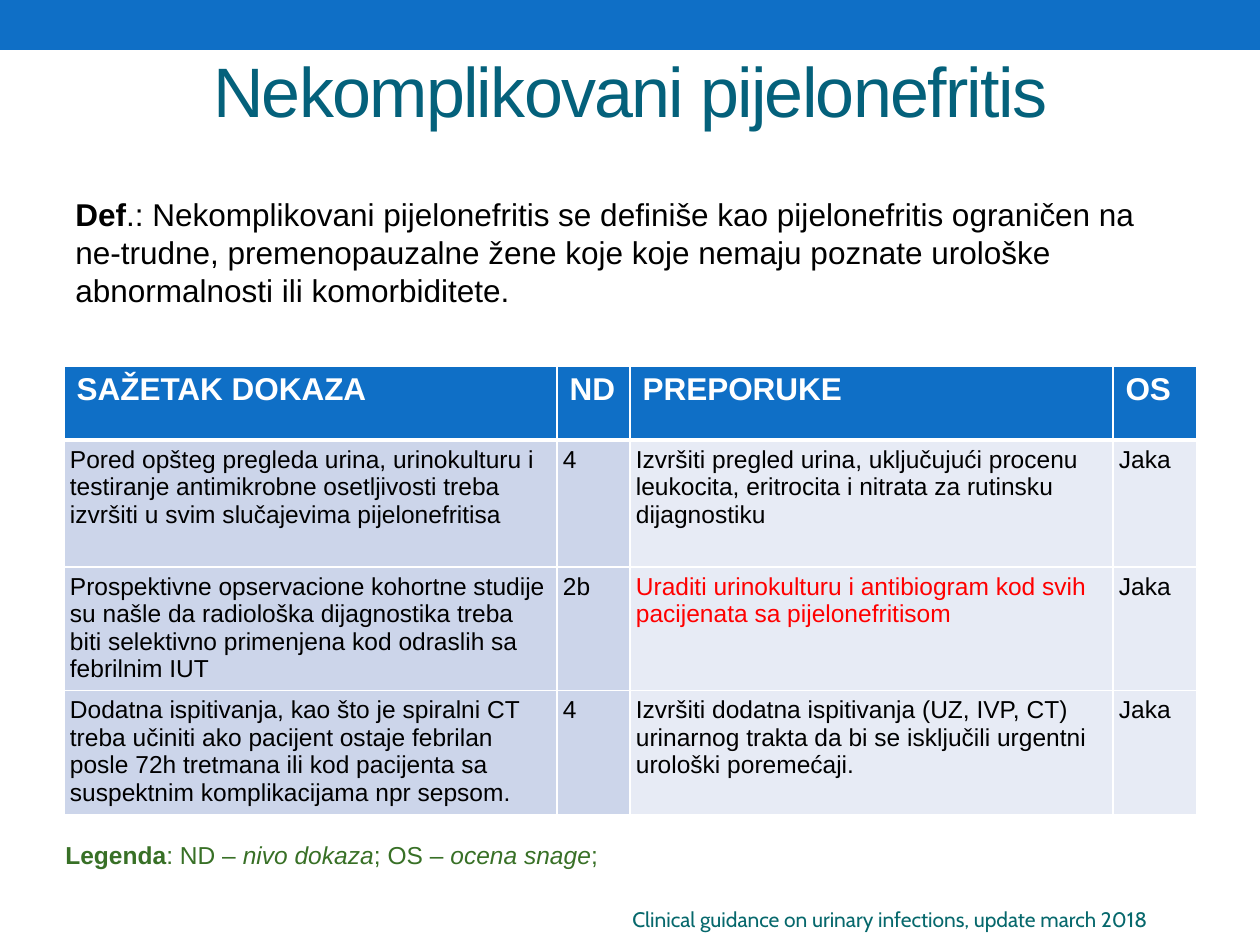
from dataclasses import dataclass

from lxml.etree import SubElement
from pptx import Presentation
from pptx.dml.color import RGBColor
from pptx.enum.shapes import MSO_SHAPE as Shape
from pptx.enum.text import MSO_ANCHOR as Anchor, PP_ALIGN as Align
from pptx.oxml.ns import qn
from pptx.util import Pt

PX = 914400 / 126  # EMU in one px


@dataclass(frozen=True)
class Theme:
    font: str = "Arial"
    source_font: str = "Cabin"
    accent: str = "0F6FC6"
    title: str = "04617B"
    text: str = "000000"
    highlight: str = "FF0000"
    legend: str = "387026"
    source: str = "06686C"
    white: str = "FFFFFF"
    evidence_fill: str = "CCD5EA"
    advice_fill: str = "E7EBF5"
    title_size: int = 40
    body_size: int = 18
    small_size: int = 14
    source_size: int = 12


THEME = Theme()

HEADERS = ["SAŽETAK DOKAZA", "ND", "PREPORUKE", "OS"]
ROWS = [
    ["Pored opšteg pregleda urina, urinokulturu i testiranje antimikrobne "
     "osetljivosti treba izvršiti u svim slučajevima pijelonefritisa", "4",
     "Izvršiti pregled urina, uključujući procenu leukocita, eritrocita i "
     "nitrata za rutinsku dijagnostiku", "Jaka"],
    ["Prospektivne opservacione kohortne studije su našle da radiološka "
     "dijagnostika treba biti selektivno primenjena kod odraslih sa "
     "febrilnim IUT", "2b",
     "Uraditi urinokulturu i antibiogram kod svih pacijenata sa "
     "pijelonefritisom", "Jaka"],
    ["Dodatna ispitivanja, kao što je spiralni CT treba učiniti ako pacijent "
     "ostaje febrilan posle 72h tretmana ili kod pacijenta sa suspektnim "
     "komplikacijama npr sepsom.", "4",
     "Izvršiti dodatna ispitivanja (UZ, IVP, CT) urinarnog trakta da bi se "
     "isključili urgentni urološki poremećaji.", "Jaka"],
]
HIGHLIGHTED = (2, 2)  # row and column of the red recommendation
COLUMN_WIDTHS = [493, 73, 483, 84]
ROW_HEIGHTS = [74, 127, 123, 121]


def emu(*lengths):
    return [round(length * PX) for length in lengths]


def format_run(run, size, color, bold=False, italic=False, font=THEME.font):
    run.font.name = font
    run.font.size = Pt(size)
    run.font.bold = bold
    run.font.italic = italic
    run.font.color.rgb = RGBColor.from_string(color)


def add_band(slide, box):
    band = slide.shapes.add_shape(Shape.RECTANGLE, *emu(*box))
    band.shadow.inherit = False
    band.fill.solid()
    band.fill.fore_color.rgb = RGBColor.from_string(THEME.accent)
    band.line.fill.background()


def place_title(slide, box, text):
    title = slide.shapes.title
    title.left, title.top, title.width, title.height = emu(*box)
    title.text_frame.text = text
    title.text_frame.vertical_anchor = Anchor.MIDDLE
    paragraph = title.text_frame.paragraphs[0]
    paragraph.alignment = Align.CENTER
    run = paragraph.runs[0]
    format_run(run, THEME.title_size, THEME.title)
    run.font._element.set("spc", "-100")


def add_text(slide, box, parts, size, color, font=THEME.font):
    """Each part is a text and its style: "", "bold" or "italic"."""
    frame = slide.shapes.add_textbox(*emu(*box)).text_frame
    frame.word_wrap = True
    for text, style in parts:
        run = frame.paragraphs[0].add_run()
        run.text = text
        format_run(run, size, color, style == "bold", style == "italic", font)


def set_borders(cell, top, bottom):
    properties = cell._tc.get_or_add_tcPr()
    for side, width in (("L", 1), ("R", 1), ("T", top), ("B", bottom)):
        line = SubElement(properties, qn(f"a:ln{side}"), w=str(Pt(width)))
        fill = SubElement(line, qn("a:solidFill"))
        SubElement(fill, qn("a:srgbClr"), val=THEME.white)


def format_cell(cell, row, column):
    header = row == 0
    set_borders(cell, top=3 if row == 1 else 1, bottom=3 if header else 1)
    if header:
        fill, color = THEME.accent, THEME.white
    else:
        fill = THEME.evidence_fill if column < 2 else THEME.advice_fill
        color = THEME.highlight if (row, column) == HIGHLIGHTED else THEME.text
        inset, = emu(6)
        cell.margin_left = cell.margin_right = cell.margin_top = inset
        cell.margin_bottom = 0  # keeps four lines within the row height
    cell.fill.solid()
    cell.fill.fore_color.rgb = RGBColor.from_string(fill)
    size = THEME.body_size if header else THEME.small_size
    format_run(cell.text_frame.paragraphs[0].runs[0], size, color, bold=header)


def add_evidence_table(slide, left, top):
    box = emu(left, top, sum(COLUMN_WIDTHS), sum(ROW_HEIGHTS))
    content = [HEADERS, *ROWS]
    table = slide.shapes.add_table(len(content), len(HEADERS), *box).table
    table.horz_banding = False
    for column, width in zip(table.columns, emu(*COLUMN_WIDTHS)):
        column.width = width
    for row, height in zip(table.rows, emu(*ROW_HEIGHTS)):
        row.height = height
    for row, texts in enumerate(content):
        for column, text in enumerate(texts):
            cell = table.cell(row, column)
            cell.text_frame.text = text
            format_cell(cell, row, column)


def main():
    presentation = Presentation()
    presentation.slide_width, presentation.slide_height = emu(1260, 945)
    slide = presentation.slides.add_slide(presentation.slide_layouts[5])

    # Heading
    add_band(slide, (0, 0, 1260, 50))
    place_title(slide, (63, 22, 1134, 136), "Nekomplikovani pijelonefritis")

    # Definition
    add_text(slide, (63, 189, 1124, 127), [
        ("Def", "bold"),
        (".: Nekomplikovani pijelonefritis se definiše kao pijelonefritis "
         "ograničen na ne-trudne, premenopauzalne žene koje koje nemaju "
         "poznate urološke abnormalnosti ili komorbiditete.", ""),
    ], THEME.body_size, THEME.text)

    # Evidence and recommendations
    add_evidence_table(slide, 64, 366)

    # Legend and source
    add_text(slide, (53, 834, 756, 43), [
        ("Legenda", "bold"), (": ND – ", ""), ("nivo dokaza", "italic"),
        ("; OS – ", ""), ("ocena snage", "italic"), (";", ""),
    ], THEME.small_size, THEME.legend)
    add_text(slide, (620, 900, 630, 38), [
        ("Clinical guidance on urinary infections, update march 2018", ""),
    ], THEME.source_size, THEME.source, THEME.source_font)

    presentation.save("out.pptx")


if __name__ == "__main__":
    main()
